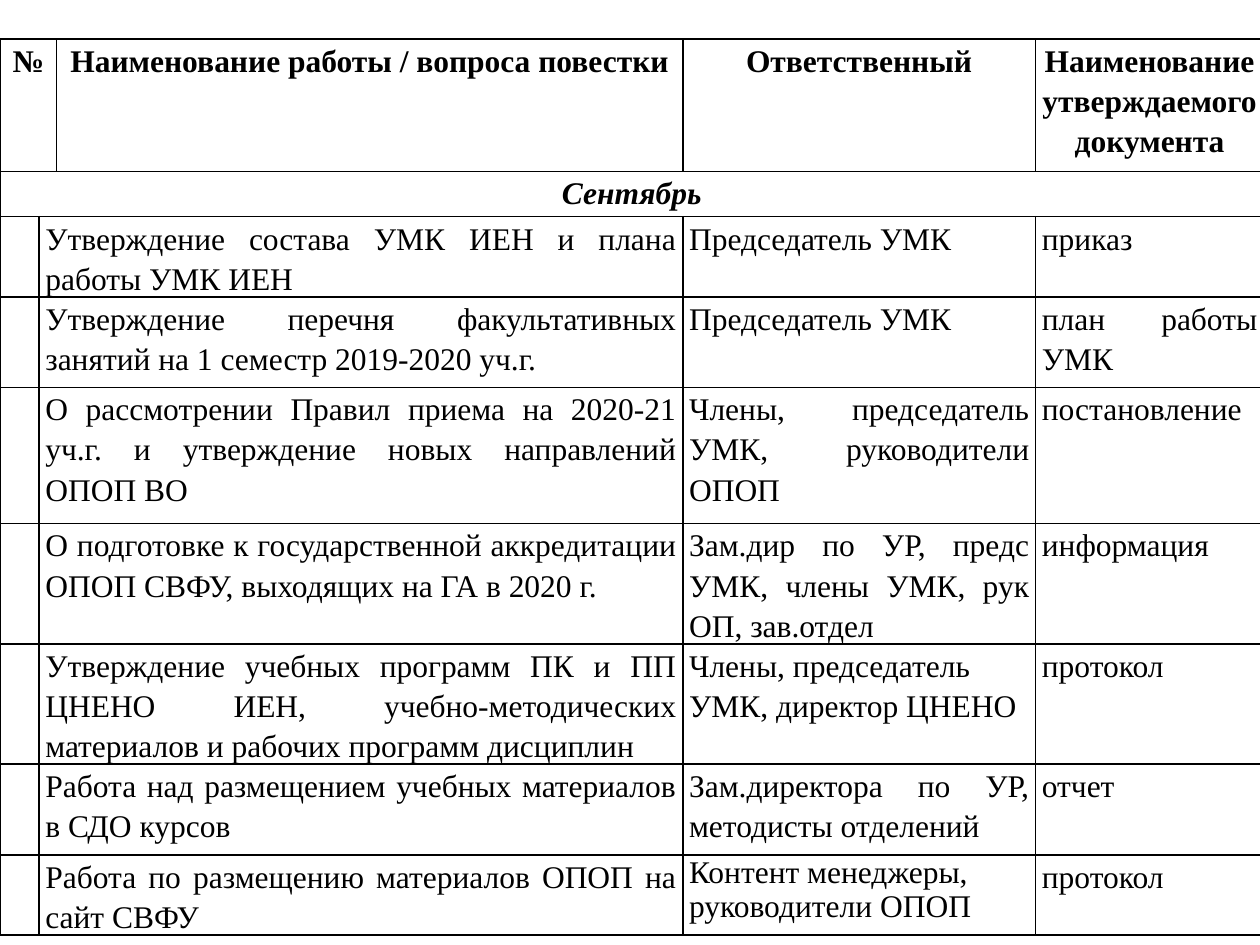
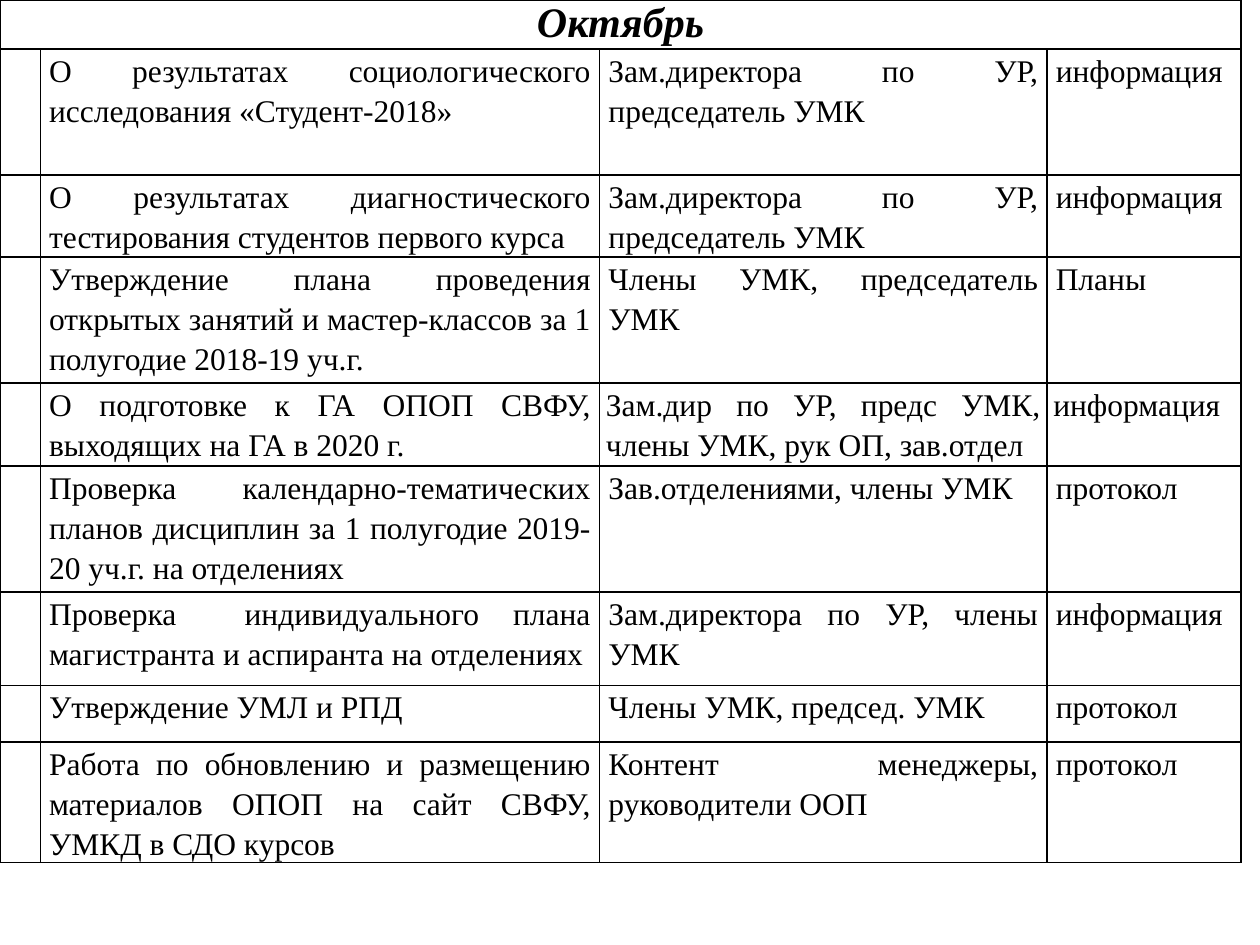
from dataclasses import dataclass

from lxml.etree import SubElement
from pptx import Presentation
from pptx.dml.color import RGBColor
from pptx.enum.text import PP_ALIGN
from pptx.oxml.ns import qn
from pptx.util import Inches, Pt

INK = {"text": "000000", "line": "000000"}
FONT = "Times New Roman"
WIDE, HIGH = Inches(10), Inches(7.5)
LEFT, MID, FULL = PP_ALIGN.LEFT, PP_ALIGN.CENTER, PP_ALIGN.JUSTIFY


@dataclass(frozen=True)
class Item:
    text: str
    align: PP_ALIGN = FULL
    size: int = 18
    bold: bool = False
    slant: bool = False
    lead: float | None = 1.15
    pad: float | None = None


@dataclass(frozen=True)
class Row:
    high: float
    items: tuple
    starts: tuple


@dataclass(frozen=True)
class Plan:
    top: float
    cols: tuple
    pad: float
    rows: tuple


def across(share: float) -> int:
    return round(WIDE * share / 100)


def down(share: float) -> int:
    return round(HIGH * share / 100)


def head(text: str, **form) -> Item:
    return Item(text, align=MID, bold=True, **form)


def task(high: float, *items, starts=(1, 2, 3)) -> Row:
    cells = tuple(i if isinstance(i, Item) else Item(i) for i in items)
    return Row(high, cells, starts)


def write(cell, text: str, *, align=FULL, size=18, bold=False, slant=False, lead=None):
    para = cell.text_frame.paragraphs[0]
    para.alignment = align
    if lead:
        para.line_spacing = lead
    run = para.add_run()
    run.text = text
    font = run.font
    font.name, font.size, font.bold, font.italic = FONT, Pt(size), bold, slant
    font.color.rgb = RGBColor.from_string(INK["text"])


def frame(cell) -> None:
    props = cell._tc.get_or_add_tcPr()
    for side in ("lnL", "lnR", "lnT", "lnB"):
        line = SubElement(props, qn(f"a:{side}"), w=str(Pt(1)))
        fill = SubElement(line, qn("a:solidFill"))
        SubElement(fill, qn("a:srgbClr"), val=INK["line"])
    cell.fill.background()


def draw(deck, plan: Plan) -> None:
    slide = deck.slides.add_slide(deck.slide_layouts[6])
    count = len(plan.cols)
    wide = across(sum(plan.cols))
    high = down(sum(row.high for row in plan.rows))
    grid = slide.shapes.add_table(
        len(plan.rows), count, 0, down(plan.top), wide, high
    ).table
    grid.first_row = grid.horz_banding = False
    for col, share in zip(grid.columns, plan.cols):
        col.width = across(share)
    for r, row in enumerate(plan.rows):
        grid.rows[r].height = down(row.high)
        for c in range(count):
            frame(grid.cell(r, c))
        ends = (*row.starts[1:], count)
        for item, start, end in zip(row.items, row.starts, ends):
            cell = grid.cell(r, start)
            if end - start > 1:
                cell.merge(grid.cell(r, end - 1))
            pad = Inches(item.pad or plan.pad)
            cell.margin_left = cell.margin_right = pad
            cell.margin_top = cell.margin_bottom = 0
            write(cell, item.text, align=item.align, size=item.size,
                  bold=item.bold, slant=item.slant, lead=item.lead)


def split(high: float, *items) -> Row:
    return task(high, *items, starts=(1, 3, 4))


FALL = Plan(4.13, (3.1, 1, 49.7, 28, 18.1), 0.05, (
    task(14, head("№"), head("Наименование работы / вопроса повестки"),
         head("Ответственный"), head("Наименование утверждаемого документа"),
         starts=(0, 2, 3, 4)),
    task(4.8, head("Сентябрь", slant=True), starts=(0,)),
    split(6, "Утверждение состава УМК ИЕН и плана работы УМК ИЕН",
          "Председатель УМК", "приказ"),
    split(9.6, "Утверждение перечня факультативных занятий на 1 семестр 2019-2020 уч.г.",
          "Председатель УМК", "план работы УМК"),
    split(14.4, "О рассмотрении Правил приема на 2020-21 уч.г. и утверждение новых направлений ОПОП ВО",
          "Члены, председатель УМК, руководители ОПОП", "постановление"),
    split(9.6, "О подготовке к государственной аккредитации ОПОП СВФУ, выходящих на ГА в 2020 г.",
          "Зам.дир по УР, предс УМК, члены УМК, рук ОП, зав.отдел", "информация"),
    split(9.6, "Утверждение учебных программ ПК и ПП ЦНЕНО ИЕН, учебно-методических материалов и рабочих программ дисциплин",
          Item("Члены, председатель УМК, директор ЦНЕНО", LEFT), "протокол"),
    split(9.6, "Работа над размещением учебных материалов в СДО курсов",
          "Зам.директора по УР, методисты отделений", "отчет"),
    split(5.33, "Работа по размещению материалов ОПОП на сайт СВФУ",
          Item("Контент менеджеры, руководители ОПОП", LEFT, lead=None), "протокол"),
))

NEXT = Plan(0, (3.2, 44.4, 35.5, 15.4), 0.07, (
    task(5.2, head("Октябрь", size=24, slant=True, lead=None, pad=0.05), starts=(0,)),
    task(13.33, "О результатах социологического исследования «Студент-2018»",
         "Зам.директора по УР, председатель УМК", "информация"),
    task(8.67, "О результатах диагностического тестирования студентов первого курса",
         "Зам.директора по УР, председатель УМК", "информация"),
    task(13.33, "Утверждение плана проведения открытых занятий и мастер-классов за 1 полугодие 2018-19 уч.г.",
         "Члены УМК, председатель УМК", "Планы"),
    task(8.8, "О подготовке к ГА ОПОП СВФУ, выходящих на ГА в 2020 г.",
         Item("Зам.дир по УР, предс УМК, члены УМК, рук ОП, зав.отдел", pad=0.05),
         Item("информация", pad=0.05)),
    task(13.33, "Проверка календарно-тематических планов дисциплин за 1 полугодие 2019-20 уч.г. на отделениях",
         "Зав.отделениями, члены УМК", "протокол"),
    task(9.87, "Проверка  индивидуального плана магистранта и аспиранта на отделениях",
         "Зам.директора по УР, члены УМК", "информация"),
    task(6, "Утверждение УМЛ и РПД",
         Item("Члены УМК, председ. УМК", LEFT), "протокол"),
    task(7.87, "Работа по обновлению и размещению материалов ОПОП на сайт СВФУ, УМКД в СДО курсов",
         "Контент менеджеры, руководители ООП", "протокол"),
))


def main() -> None:
    deck = Presentation()
    deck.slide_width, deck.slide_height = WIDE, HIGH
    for plan in (FALL, NEXT):
        draw(deck, plan)
    deck.save("out.pptx")


if __name__ == "__main__":
    main()
